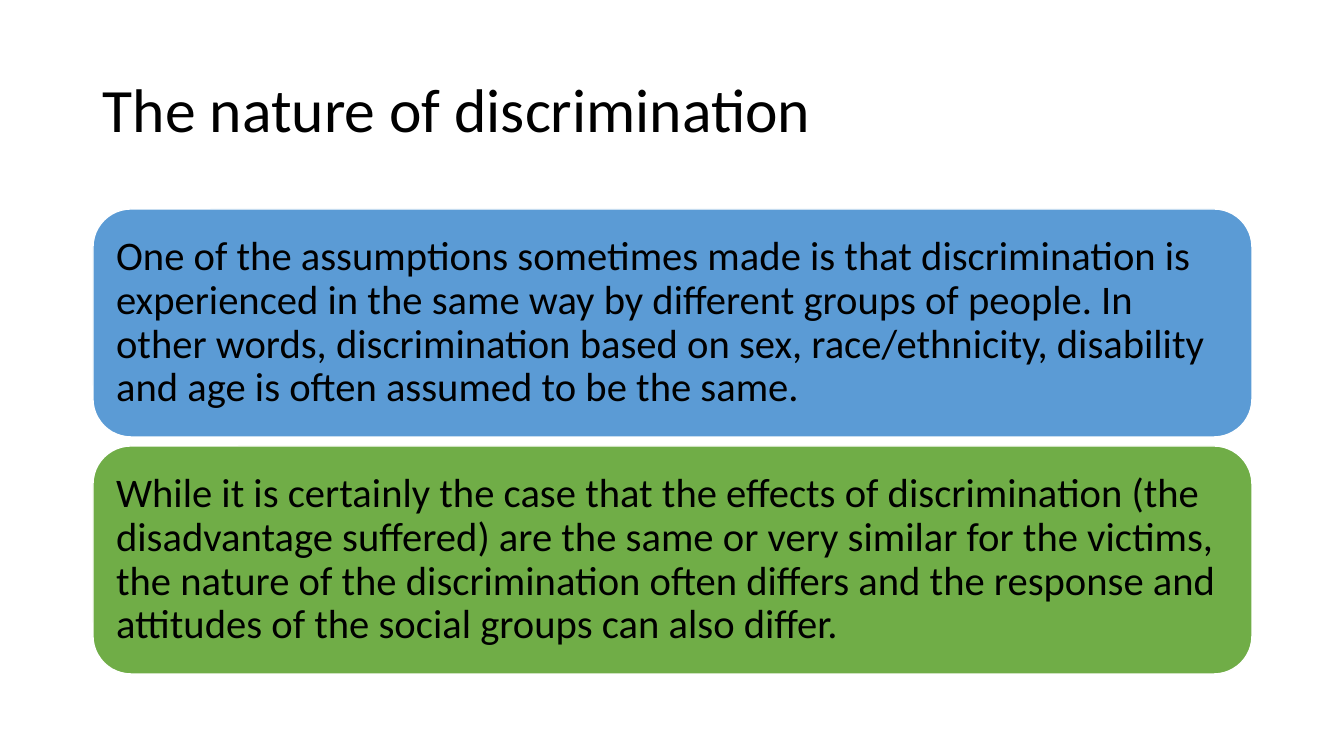
from dataclasses import dataclass

from pptx import Presentation
from pptx.dml.color import RGBColor
from pptx.enum.shapes import MSO_SHAPE
from pptx.enum.text import MSO_ANCHOR, PP_ALIGN
from pptx.shapes.autoshape import Shape
from pptx.slide import Slide
from pptx.util import Emu, Pt

BLACK = RGBColor(0x00, 0x00, 0x00)
WHITE = RGBColor(0xFF, 0xFF, 0xFF)
BLUE = RGBColor(0x5B, 0x9B, 0xD5)
GREEN = RGBColor(0x70, 0xAD, 0x47)

FONT = "Calibri"
LEFT, WIDTH = 93, 1159
TOP, HEIGHT, PITCH = 209, 228, 237


@dataclass(frozen=True)
class Panel:
    """A rounded panel holding one statement."""

    fill: RGBColor
    text: str


PANELS = [
    Panel(BLUE, "One of the assumptions sometimes made is that discrimination is "
                "experienced in the same way by different groups of people. In other "
                "words, discrimination based on sex, race/ethnicity, disability and "
                "age is often assumed to be the same."),
    Panel(GREEN, "While it is certainly the case that the effects of discrimination "
                 "(the disadvantage suffered) are the same or very similar for the "
                 "victims, the nature of the discrimination often differs and the "
                 "response and attitudes of the social groups can also differ."),
]


def px(count: int) -> Emu:
    """Turn pixels into EMU."""
    return Emu(round(count * 12192000 / 1344))


def write(shape: Shape, text: str, size: int, align: PP_ALIGN, side: int, edge: int) -> None:
    """Fill a shape with one paragraph centred in height."""
    frame = shape.text_frame
    frame.word_wrap = True
    frame.vertical_anchor = MSO_ANCHOR.MIDDLE
    frame.margin_left = frame.margin_right = px(side)
    frame.margin_top = frame.margin_bottom = px(edge)
    para = frame.paragraphs[0]
    para.alignment = align
    para.line_spacing = 0.9
    run = para.add_run()
    run.text = text
    run.font.name = FONT
    run.font.size = Pt(size)
    run.font.color.rgb = BLACK


def draw_title(slide: Slide, text: str) -> None:
    """Draw the slide title."""
    box = slide.shapes.add_textbox(px(LEFT), px(40), px(WIDTH), px(146))
    write(box, text, 44, PP_ALIGN.JUSTIFY, 10, 5)


def draw_panel(slide: Slide, panel: Panel, top: int) -> None:
    """Draw one panel at the given height."""
    shape = slide.shapes.add_shape(
        MSO_SHAPE.ROUNDED_RECTANGLE, px(LEFT), px(top), px(WIDTH), px(HEIGHT))
    shape.shadow.inherit = False
    shape.fill.solid()
    shape.fill.fore_color.rgb = panel.fill
    shape.line.color.rgb = WHITE
    shape.line.width = Pt(1)
    write(shape, panel.text, 29, PP_ALIGN.LEFT, 12, 12)


def main() -> None:
    """Build and save the slide."""
    deck = Presentation()
    deck.slide_width, deck.slide_height = px(1344), px(756)
    slide = deck.slides.add_slide(deck.slide_layouts[6])
    draw_title(slide, "The nature of discrimination")
    for row, panel in enumerate(PANELS):
        draw_panel(slide, panel, TOP + row * PITCH)
    deck.save("out.pptx")


if __name__ == "__main__":
    main()
